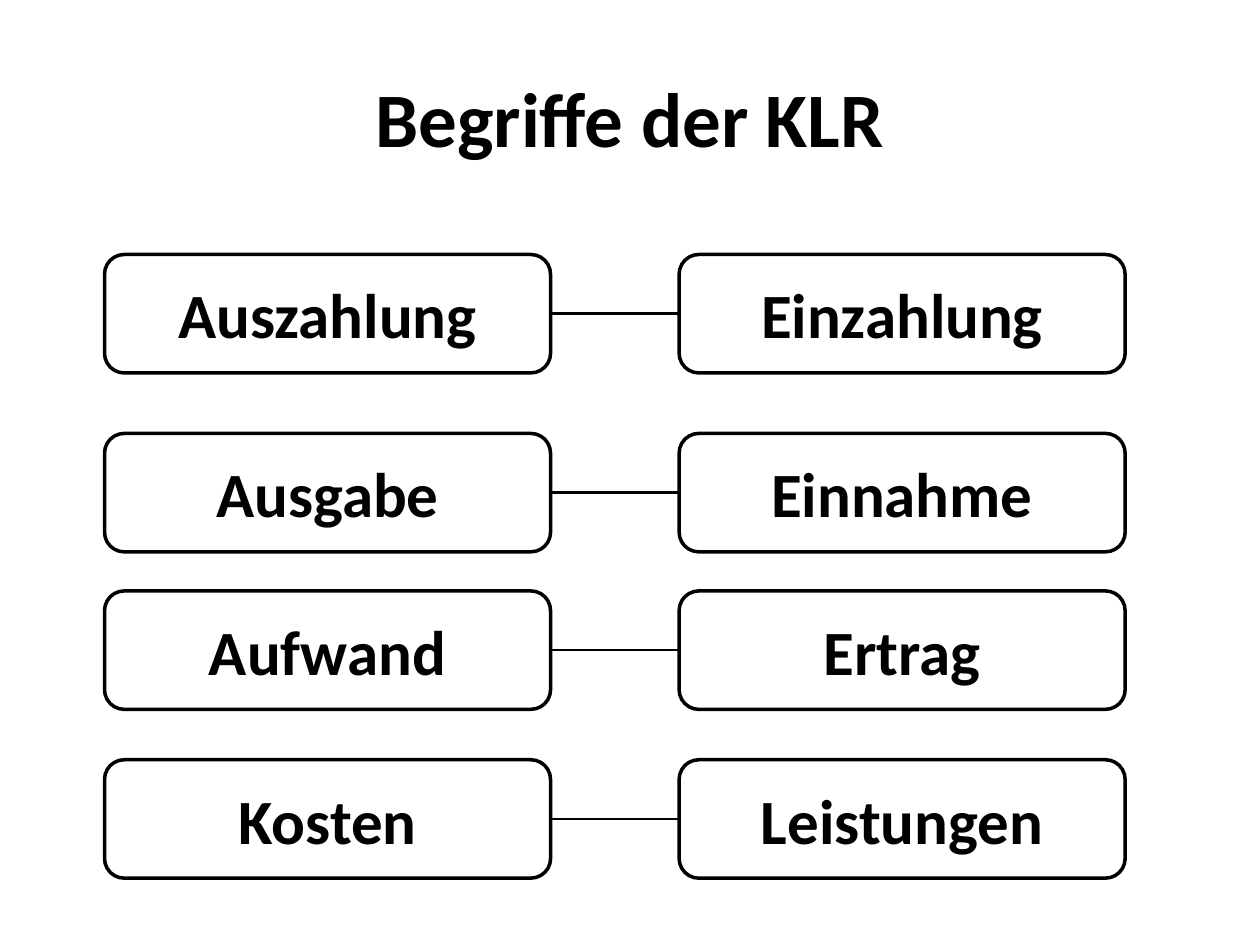
from lxml.etree import SubElement
from pptx import Presentation
from pptx.dml.color import RGBColor
from pptx.enum.shapes import MSO_CONNECTOR, MSO_SHAPE
from pptx.enum.text import MSO_ANCHOR, PP_ALIGN
from pptx.oxml.ns import qn
from pptx.util import Inches, Pt

BLACK = RGBColor(0, 0, 0)
WHITE = RGBColor(255, 255, 255)


def write_text(shape, text, size, bold=True, color=BLACK, font="Calibri"):
    frame = shape.text_frame
    frame.word_wrap = True
    frame.vertical_anchor = MSO_ANCHOR.MIDDLE
    para = frame.paragraphs[0]
    para.alignment = PP_ALIGN.CENTER
    span = para.add_run()
    span.text = text
    span.font.size = Pt(size)
    span.font.bold = bold
    span.font.name = font
    span.font.color.rgb = color


deck = Presentation()
deck.slide_width = Inches(10)
deck.slide_height = Inches(7.5)
page = deck.slides.add_slide(deck.slide_layouts[5])

title = page.shapes.title
title.left, title.top = Inches(0.5), Inches(0.3)
title.width, title.height = Inches(9), Inches(1.25)
write_text(title, "Begriffe der KLR", size=44)

columns = [0.83, 5.39]
box_width, box_height = 3.54, 0.94
rows = [
    (2.02, ["Auszahlung", "Einzahlung"]),
    (3.44, ["Ausgabe", "Einnahme"]),
    (4.69, ["Aufwand", "Ertrag"]),
    (6.03, ["Kosten", "Leistungen"]),
]

pairs = []
for top, terms in rows:
    pair = []
    for left, term in zip(columns, terms):
        box = page.shapes.add_shape(
            MSO_SHAPE.ROUNDED_RECTANGLE,
            Inches(left), Inches(top), Inches(box_width), Inches(box_height),
        )
        box.shadow.inherit = False
        box.fill.solid()
        box.fill.fore_color.rgb = WHITE
        box.line.color.rgb = BLACK
        box.line.width = Pt(2)
        write_text(box, term, size=36)
        pair.append(box)
    pairs.append(pair)

for expense, income in pairs:
    link = page.shapes.add_connector(MSO_CONNECTOR.STRAIGHT, 0, 0, 0, 0)
    link.begin_connect(expense, 3)
    link.end_connect(income, 1)
    link.line.color.rgb = BLACK
    link.line.width = Pt(1.5)
    SubElement(link._element.spPr, qn("a:effectLst"))

deck.save("out.pptx")
